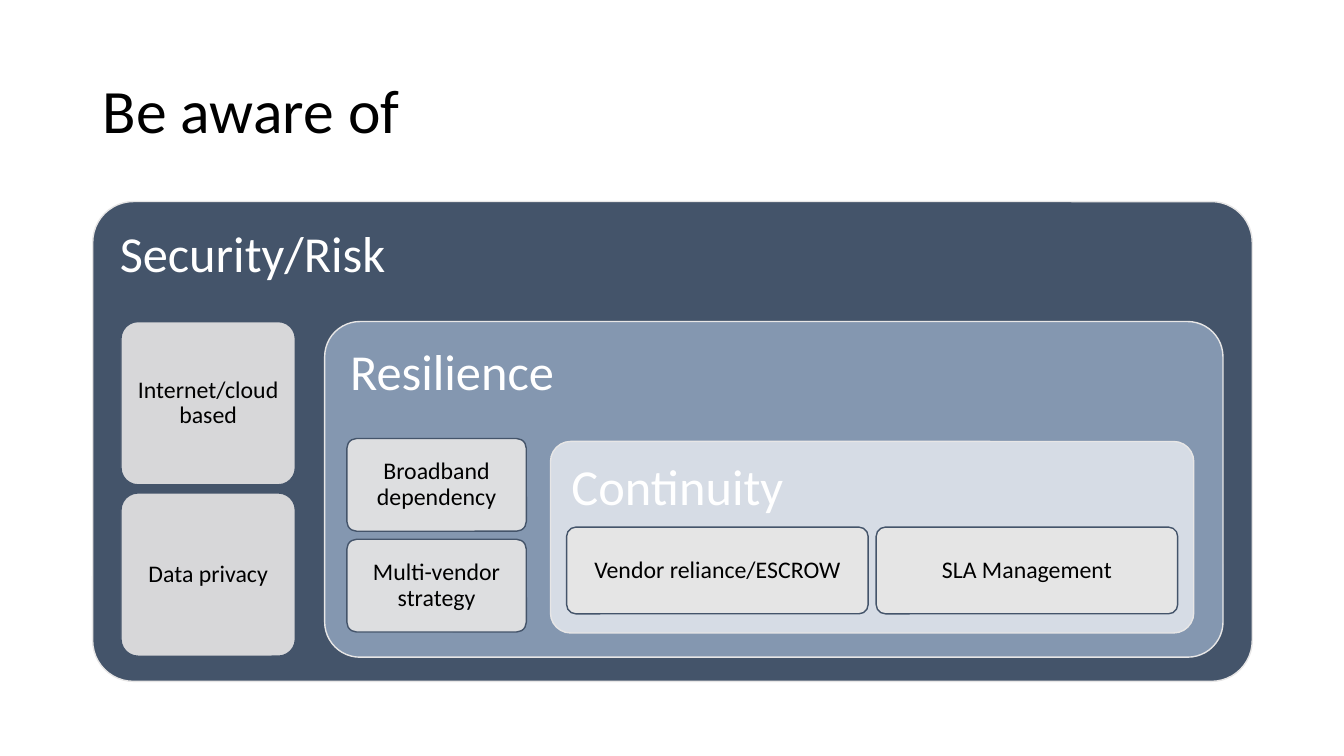
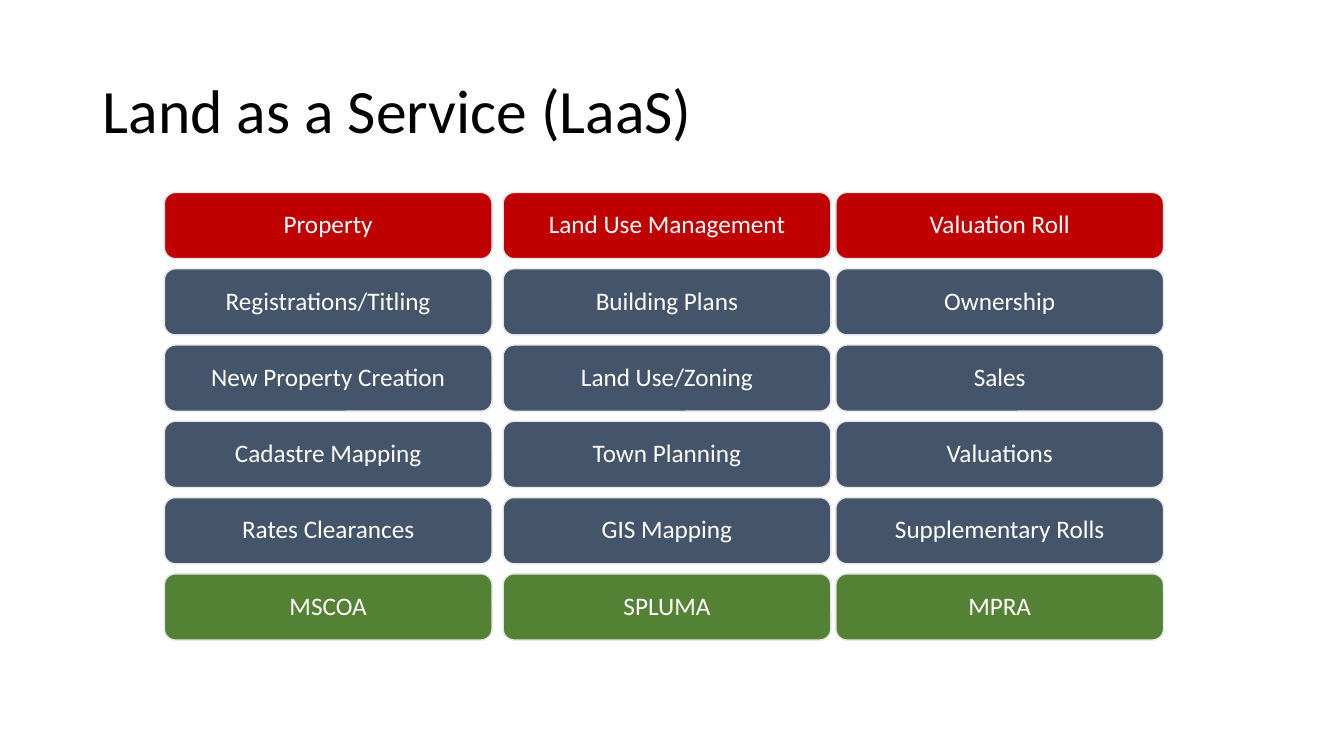
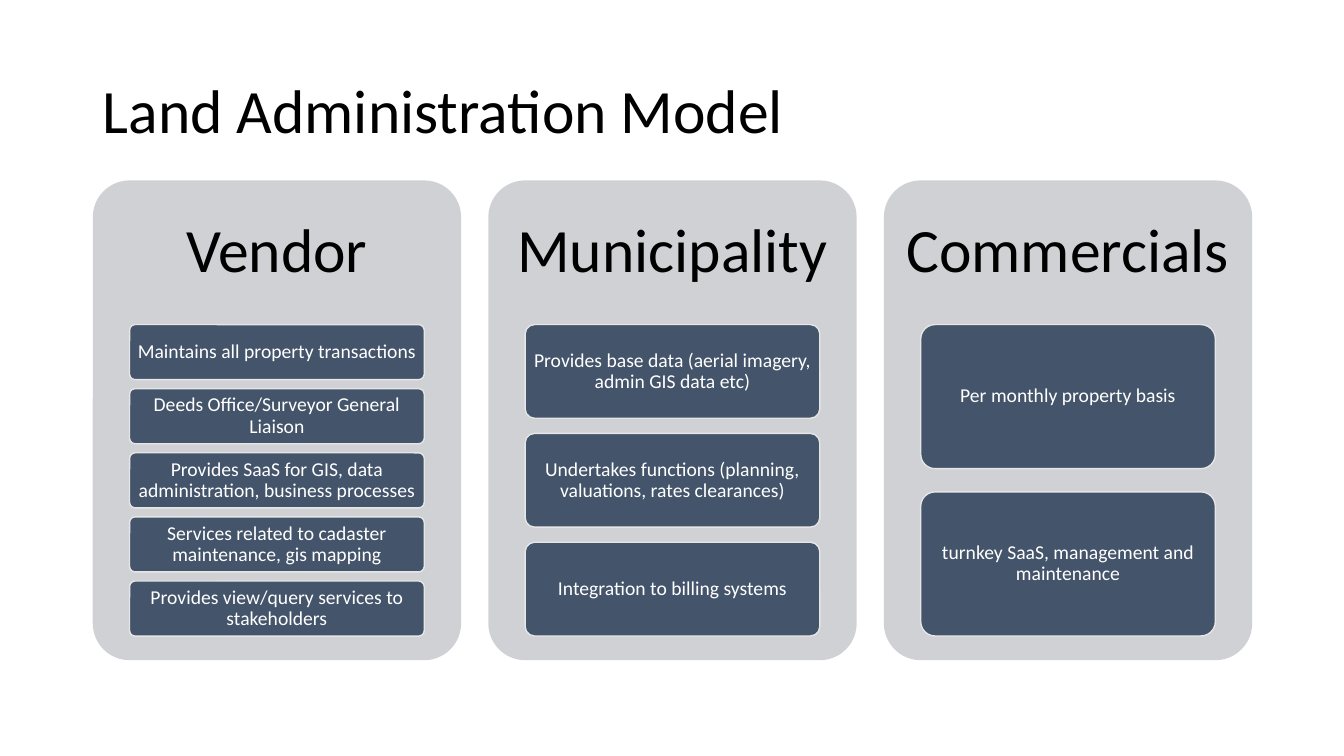
from lxml import etree
from pptx import Presentation
from pptx.dml.color import RGBColor
from pptx.enum.shapes import MSO_SHAPE
from pptx.enum.text import MSO_ANCHOR, MSO_AUTO_SIZE, PP_ALIGN
from pptx.oxml.ns import qn
from pptx.util import Inches, Pt

ROUNDED = MSO_SHAPE.ROUNDED_RECTANGLE
TOP, MIDDLE = MSO_ANCHOR.TOP, MSO_ANCHOR.MIDDLE
LEFT, CENTER = PP_ALIGN.LEFT, PP_ALIGN.CENTER
NO_AUTOFIT = MSO_AUTO_SIZE.NONE
TITLE_ONLY = 5

FONT = "Calibri"
COLORS = {
    "black": "000000",
    "white": "FFFFFF",
    "navy": "44546A",
    "steel": "8497B0",
    "mist": "D6DCE5",
    "silver": "E7E6E6",
    "panel": "CFD1D4",
    "red": "C00000",
    "green": "548235",
}


def color(name):
    return RGBColor.from_string(COLORS[name])


def spread(start, end, count, gap):
    """Divide start..end into equal parts; return their positions and size."""
    size = (end - start - gap * (count - 1)) / count
    return [start + i * (size + gap) for i in range(count)], size


class Deck:
    def __init__(self):
        self.prs = Presentation()
        self.prs.slide_width = Inches(13.33)
        self.prs.slide_height = Inches(7.5)
        self.slide = None

    def new_slide(self, title):
        layout = self.prs.slide_layouts[TITLE_ONLY]
        self.slide = self.prs.slides.add_slide(layout)
        heading = self.slide.shapes.title
        heading.left, heading.top = Inches(0.92), Inches(0.4)
        heading.width, heading.height = Inches(11.5), Inches(1.45)
        self.set_text(heading, title, 44, "black", LEFT, MIDDLE, (0.1, 0.05, 0.1, 0.05))

    def set_text(self, shape, text, size, ink, align, anchor, insets):
        frame = shape.text_frame
        frame.word_wrap = True
        frame.auto_size = NO_AUTOFIT
        frame.vertical_anchor = anchor
        (frame.margin_left, frame.margin_top,
         frame.margin_right, frame.margin_bottom) = map(Inches, insets)
        paragraph = frame.paragraphs[0]
        paragraph.alignment = align
        paragraph.line_spacing = 0.9
        run = paragraph.add_run()
        run.text = text
        run.font.name = FONT
        run.font.size = Pt(size)
        run.font.color.rgb = color(ink)

    def rounded(self, left, top, width, height, fill, line="silver", corner=None):
        shape = self.slide.shapes.add_shape(
            ROUNDED, Inches(left), Inches(top), Inches(width), Inches(height))
        shape.shadow.inherit = False
        shape.fill.solid()
        shape.fill.fore_color.rgb = color(fill)
        if line:
            shape.line.color.rgb = color(line)
            shape.line.width = Pt(1)
        else:
            shape.line.fill.background()
        if corner is not None:
            shape.adjustments[0] = corner
        return shape

    def layer(self, text, box, fill, corner=0.105):
        """A nested frame with its heading at the top left."""
        shape = self.rounded(*box, fill, corner=corner)
        self.set_text(shape, text, 36, "white", LEFT, TOP, (0.15,) * 4)

    def topic(self, text, *box):
        """A slightly see-through box inside a layer."""
        shape = self.rounded(*box, "silver", line="navy", corner=0.105)
        tint = shape.element.spPr.find(qn("a:solidFill"))[0]
        etree.SubElement(tint, qn("a:alpha")).set("val", "90000")
        self.set_text(shape, text, 17, "black", CENTER, MIDDLE, (0.07,) * 4)

    def service(self, text, box, fill):
        shape = self.rounded(*box, fill)
        self.set_text(shape, text, 18, "white", CENTER, MIDDLE, (0.07,) * 4)

    def party(self, text, left, width):
        """A tall panel with its heading centred in the top part."""
        shape = self.rounded(left, 1.79, width, 4.76, "panel", line=None, corner=0.1)
        self.set_text(shape, text, 44, "black", CENTER, MIDDLE, (0.07, 0.07, 0.07, 3.4))

    def duty(self, text, *box):
        shape = self.rounded(*box, "navy", corner=0.1)
        self.set_text(shape, text, 14, "white", CENTER, MIDDLE, (0.04, 0.03, 0.04, 0.03))


def risk_slide(deck):
    deck.new_slide("Be aware of")
    deck.layer("Security/Risk", (0.92, 2, 11.5, 4.76), "navy", corner=0.085)
    deck.layer("Resilience", (3.22, 3.19, 8.91, 3.33), "steel")
    deck.layer("Continuity", (5.46, 4.38, 6.38, 1.9), "mist")

    stacks = [
        (1.2, 1.73, 3.19, 6.51, ["Internet/cloud based", "Data privacy"]),
        (3.44, 1.78, 4.35, 6.27, ["Broadband dependency", "Multi-vendor strategy"]),
    ]
    for left, width, start, end, topics in stacks:
        tops, height = spread(start, end, len(topics), 0.08)
        for topic, top in zip(topics, tops):
            deck.topic(topic, left, top, width, height)

    continuity = ["Vendor reliance/ESCROW", "SLA Management"]
    lefts, width = spread(5.62, 11.68, len(continuity), 0.08)
    for topic, left in zip(continuity, lefts):
        deck.topic(topic, left, 5.23, width, 0.86)


def service_slide(deck):
    deck.new_slide("Land as a Service (LaaS)")
    columns = [
        (1.63, ["Property", "Registrations/Titling", "New Property Creation",
                "Cadastre Mapping", "Rates Clearances", "MSCOA"]),
        (4.99, ["Land Use Management", "Building Plans", "Land Use/Zoning",
                "Town Planning", "GIS Mapping", "SPLUMA"]),
        (8.29, ["Valuation Roll", "Ownership", "Sales",
                "Valuations", "Supplementary Rolls", "MPRA"]),
    ]
    row_fills = ["red"] + ["navy"] * 4 + ["green"]
    tops, height = spread(1.91, 6.35, len(row_fills), 0.1)
    for left, services in columns:
        for service, top, fill in zip(services, tops, row_fills):
            deck.service(service, (left, top, 3.25, height), fill)


def model_slide(deck):
    deck.new_slide("Land Administration Model")
    parties = [
        ("Vendor", 0.09, [
            "Maintains all property transactions",
            "Deeds Office/Surveyor General Liaison",
            "Provides SaaS for GIS, data administration, business processes",
            "Services related to cadaster maintenance, gis mapping",
            "Provides view/query services to stakeholders"]),
        ("Municipality", 0.15, [
            "Provides base data (aerial imagery, admin GIS data etc)",
            "Undertakes functions (planning, valuations, rates clearances)",
            "Integration to billing systems"]),
        ("Commercials", 0.23, [
            "Per monthly property basis",
            "turnkey SaaS, management and maintenance"]),
    ]
    lefts, width = spread(0.92, 12.42, len(parties), 0.27)
    for left, (party, gap, duties) in zip(lefts, parties):
        deck.party(party, left, width)
        tops, height = spread(3.22, 6.31, len(duties), gap)
        for duty, top in zip(duties, tops):
            deck.duty(duty, left + width * 0.1, top, width * 0.8, height)


def main():
    deck = Deck()
    risk_slide(deck)
    service_slide(deck)
    model_slide(deck)
    deck.prs.save("out.pptx")


if __name__ == "__main__":
    main()
